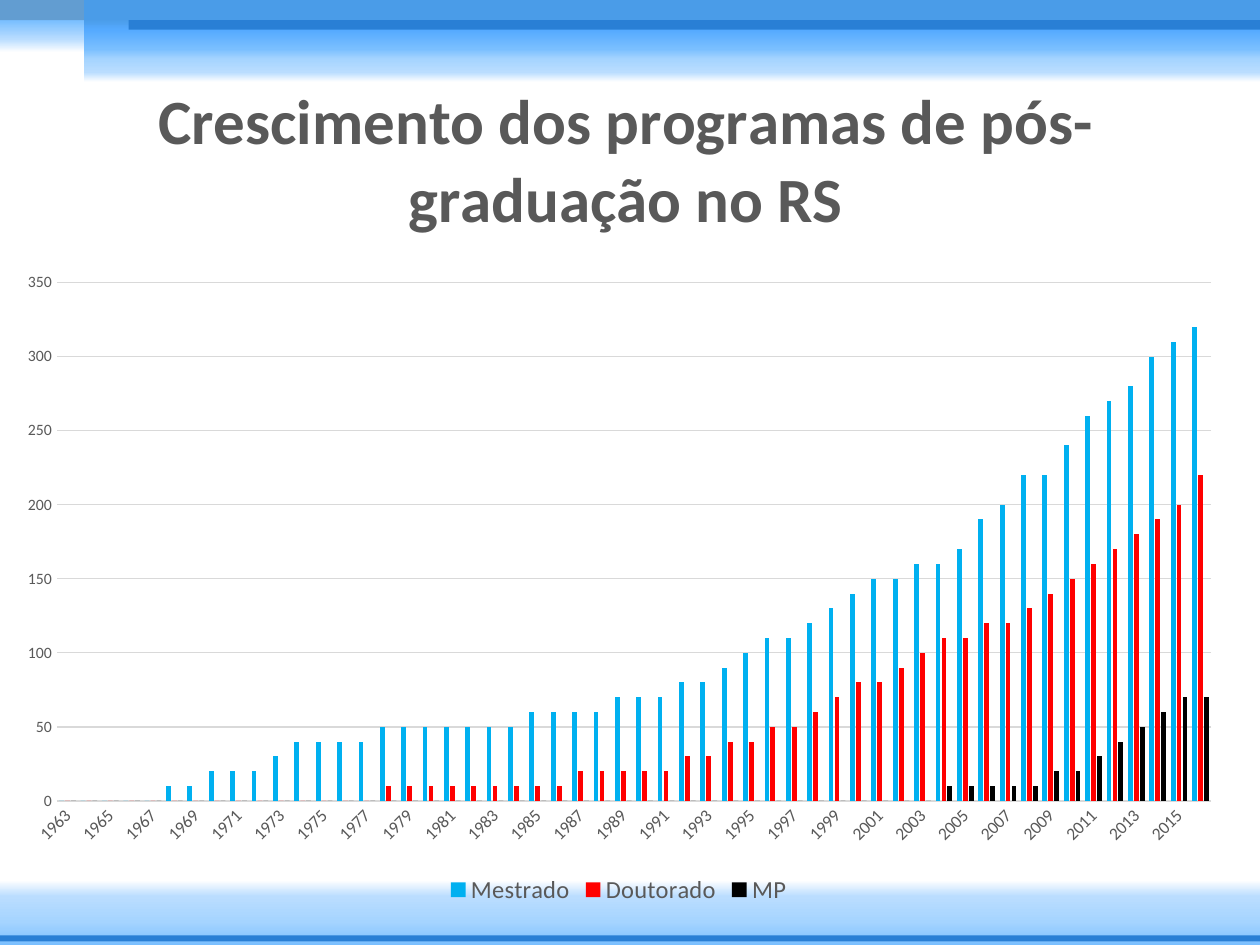
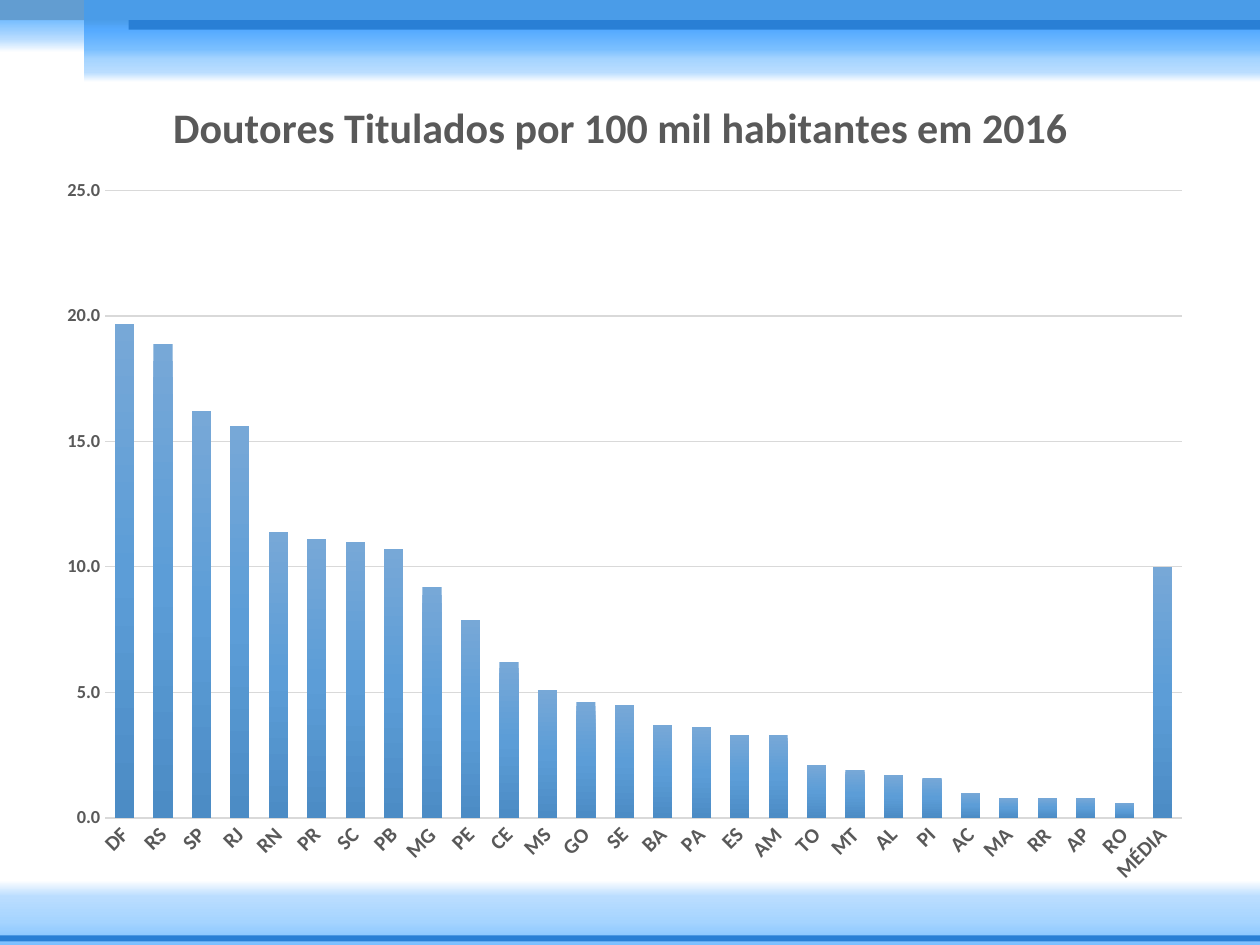
from lxml import etree
from pptx import Presentation
from pptx.chart.data import CategoryChartData
from pptx.dml.color import RGBColor
from pptx.enum.chart import XL_CHART_TYPE, XL_LEGEND_POSITION, XL_TICK_MARK
from pptx.enum.shapes import MSO_SHAPE
from pptx.oxml.ns import qn
from pptx.util import Pt

COLUMNS = XL_CHART_TYPE.COLUMN_CLUSTERED
LEGEND_BOTTOM = XL_LEGEND_POSITION.BOTTOM
NO_TICK = XL_TICK_MARK.NONE
RECTANGLE = MSO_SHAPE.RECTANGLE

FONT = "Calibri"
STEEL = RGBColor(0x62, 0x9D, 0xD1)
ACCENT = RGBColor(0x29, 0x7F, 0xD5)
TEXT_GRAY = RGBColor(0x59, 0x59, 0x59)
GRID_GRAY = RGBColor(0xD9, 0xD9, 0xD9)
SKY = RGBColor(0x00, 0xB0, 0xF0)
RED = RGBColor(0xFF, 0x00, 0x00)
BLACK = RGBColor(0x00, 0x00, 0x00)
WHITE = RGBColor(0xFF, 0xFF, 0xFF)
GLOW_TOP = RGBColor(0x4A, 0x9C, 0xE8)
GLOW_STRONG = RGBColor(0x55, 0xAA, 0xFF)
GLOW_MIDDLE = RGBColor(0x7A, 0xBF, 0xFF)
GLOW_SOFT = RGBColor(0xA5, 0xD4, 0xFF)
GLOW_PALE = RGBColor(0xBA, 0xDD, 0xFF)
COLUMN_LIGHT = RGBColor(0x77, 0xA8, 0xD7)
COLUMN_MIDDLE = RGBColor(0x5C, 0x9D, 0xD7)
COLUMN_DARK = RGBColor(0x4C, 0x8C, 0xC5)

# left, top, width, height in points; one colour or a list of (percent, colour)
BANDS = [
    ((0, 0, 72, 30), [(0, GLOW_MIDDLE), (40, GLOW_MIDDLE), (75, GLOW_PALE), (100, WHITE)]),
    ((0, 0, 720, 11.5), STEEL),
    ((48, 0, 672, 47), [(0, GLOW_TOP), (24, GLOW_TOP), (36, GLOW_STRONG), (60, GLOW_MIDDLE),
                        (72, GLOW_SOFT), (88, GLOW_PALE), (100, WHITE)]),
    ((73.5, 11.5, 646.5, 5.5), ACCENT),
    ((0, 503, 720, 37), [(0, WHITE), (25, GLOW_PALE), (65, GLOW_SOFT), (100, GLOW_MIDDLE)]),
    ((0, 534.5, 720, 3.5), ACCENT),
]

MESTRADO = [0, 0, 0, 0, 0, 10, 10, 20, 20, 20, 30, 40, 40, 40, 40, 50, 50, 50, 50, 50, 50, 50,
            60, 60, 60, 60, 70, 70, 70, 80, 80, 90, 100, 110, 110, 120, 130, 140, 150, 150,
            160, 160, 170, 190, 200, 220, 220, 240, 260, 270, 280, 300, 310, 320]
DOUTORADO = [0] * 15 + [10] * 9 + [
    20, 20, 20, 20, 20, 30, 30, 40, 40, 50, 50, 60, 70, 80, 80, 90,
    100, 110, 110, 120, 120, 130, 140, 150, 160, 170, 180, 190, 200, 220]
MP = [0] * 41 + [10, 10, 10, 10, 10, 20, 20, 30, 40, 50, 60, 70, 70]
DOCTORS_BY_STATE = {
    "DF": 19.7, "RS": 18.9, "SP": 16.2, "RJ": 15.6, "RN": 11.4, "PR": 11.1, "SC": 11,
    "PB": 10.7, "MG": 9.2, "PE": 7.9, "CE": 6.2, "MS": 5.1, "GO": 4.6, "SE": 4.5,
    "BA": 3.7, "PA": 3.6, "ES": 3.3, "AM": 3.3, "TO": 2.1, "MT": 1.9, "AL": 1.7,
    "PI": 1.6, "AC": 1, "MA": 0.8, "RR": 0.8, "AP": 0.8, "RO": 0.6, "MÉDIA": 10,
}

# title_at and plot_at are fractions of the chart frame
CHARTS = [
    dict(title="Crescimento dos programas de pós-graduação no RS", title_size=36,
         frame=(1.5, 37.5, 704, 482.5), title_at=(0.117, -0.016),
         plot_at=(0.044, 0.257, 0.937, 0.614),
         categories=[str(year) for year in range(1963, 2017)],
         series=[("Mestrado", MESTRADO, SKY), ("Doutorado", DOUTORADO, RED), ("MP", MP, BLACK)],
         top=350, step=50, number_format="General", sizes=(10, 9), bold=False,
         label_skip=2, legend=True),
    dict(title="Doutores Titulados por 100 mil habitantes em 2016", title_size=24,
         frame=(25, 43, 663, 471), title_at=(0.105, 0.02),
         plot_at=(0.053, 0.14, 0.928, 0.761),
         categories=list(DOCTORS_BY_STATE),
         series=[("Series 1", list(DOCTORS_BY_STATE.values()),
                  [(0, COLUMN_LIGHT), (50, COLUMN_MIDDLE), (100, COLUMN_DARK)])],
         top=25, step=5, number_format="0.0", sizes=(12, 10.5), bold=True,
         label_skip=1, legend=False),
]


def paint(fill, properties, colour):
    """Fill with one colour, or with a downward gradient put in the XML properties."""
    fill.solid()
    if isinstance(colour, RGBColor):
        fill.fore_color.rgb = colour
        return
    gradient = etree.Element(qn("a:gradFill"), rotWithShape="1")
    stops = etree.SubElement(gradient, qn("a:gsLst"))
    for percent, shade in colour:
        stop = etree.SubElement(stops, qn("a:gs"), pos=str(percent * 1000))
        etree.SubElement(stop, qn("a:srgbClr"), val=str(shade))
    etree.SubElement(gradient, qn("a:lin"), ang="5400000", scaled="0")
    properties.replace(properties.find(qn("a:solidFill")), gradient)


def add_master_bands(deck, page):
    """Draw the bands on a page, then move them to the master that all pages share."""
    master_tree = deck.slide_master.shapes.element
    for position, (box, colour) in enumerate(BANDS):
        band = page.shapes.add_shape(RECTANGLE, *map(Pt, box))
        band.name = f"Band {position + 1}"
        band.shadow.inherit = False
        band.line.fill.background()
        paint(band.fill, band.element.spPr, colour)
        master_tree.insert(2 + position, band.element)


def set_layout(part, index, fractions, inner=False):
    """Give a chart part a manual layout as its child number index."""
    old = part.find(qn("c:layout"))
    if old is not None:
        part.remove(old)
    layout = etree.Element(qn("c:layout"))
    manual = etree.SubElement(layout, qn("c:manualLayout"))
    if inner:
        etree.SubElement(manual, qn("c:layoutTarget"), val="inner")
    for mode in ("xMode", "yMode"):
        etree.SubElement(manual, qn(f"c:{mode}"), val="edge")
    for side, value in zip("xywh", fractions):
        etree.SubElement(manual, qn(f"c:{side}"), val=str(value))
    part.insert(index, layout)


def style_font(font, size, bold=False):
    font.name = FONT
    font.size = Pt(size)
    font.bold = bold
    font.color.rgb = TEXT_GRAY


def style_axes(chart, item):
    category, value = chart.category_axis, chart.value_axis
    for axis, size in zip((category, value), item["sizes"]):
        axis.major_tick_mark = axis.minor_tick_mark = NO_TICK
        style_font(axis.tick_labels.font, size, item["bold"])
    category.has_major_gridlines = False
    category.format.line.color.rgb = GRID_GRAY
    category.format.line.width = Pt(1)
    value.format.line.fill.background()
    value.minimum_scale, value.maximum_scale = 0, item["top"]
    value.major_unit = item["step"]
    value.tick_labels.number_format = item["number_format"]
    value.tick_labels.number_format_is_linked = False
    value.major_gridlines.format.line.color.rgb = GRID_GRAY
    value.major_gridlines.format.line.width = Pt(0.75)

    category_xml = chart.element.xpath(".//c:catAx")[0]
    category_xml.find(qn("c:txPr")).find(qn("a:bodyPr")).set("rot", "-2700000")
    skip = etree.Element(qn("c:tickLblSkip"), val=str(item["label_skip"]))
    category_xml.find(qn("c:noMultiLvlLbl")).addprevious(skip)


def add_column_chart(page, item):
    data = CategoryChartData()
    data.categories = item["categories"]
    for name, values, _ in item["series"]:
        data.add_series(name, values)
    chart = page.shapes.add_chart(COLUMNS, *map(Pt, item["frame"]), data).chart
    chart.font.name = FONT
    chart.font.size = Pt(10)

    chart.has_title = True
    span = chart.chart_title.text_frame.paragraphs[0].add_run()
    span.text = item["title"]
    style_font(span.font, item["title_size"], bold=True)
    set_layout(chart.element.xpath("./c:chart/c:title")[0], 1, item["title_at"])
    set_layout(chart.element.xpath(".//c:plotArea")[0], 0, item["plot_at"], inner=True)

    style_axes(chart, item)
    plot = chart.plots[0]
    plot.gap_width, plot.overlap = 100, -24
    plot.vary_by_categories = False
    for position, (_, _, colour) in enumerate(item["series"]):
        series_format = plot.series[position].format
        series_format.fill.solid()
        properties = chart.element.xpath(".//c:ser/c:spPr")[position]
        paint(series_format.fill, properties, colour)

    chart.has_legend = item["legend"]
    if item["legend"]:
        chart.legend.position = LEGEND_BOTTOM
        chart.legend.include_in_layout = False
        style_font(chart.legend.font, 14)


def main():
    deck = Presentation()
    deck.slide_width, deck.slide_height = Pt(720), Pt(540)
    blank = deck.slide_layouts[6]
    pages = [deck.slides.add_slide(blank) for _ in CHARTS]
    add_master_bands(deck, pages[0])
    for page, item in zip(pages, CHARTS):
        add_column_chart(page, item)
    deck.save("out.pptx")


if __name__ == "__main__":
    main()
